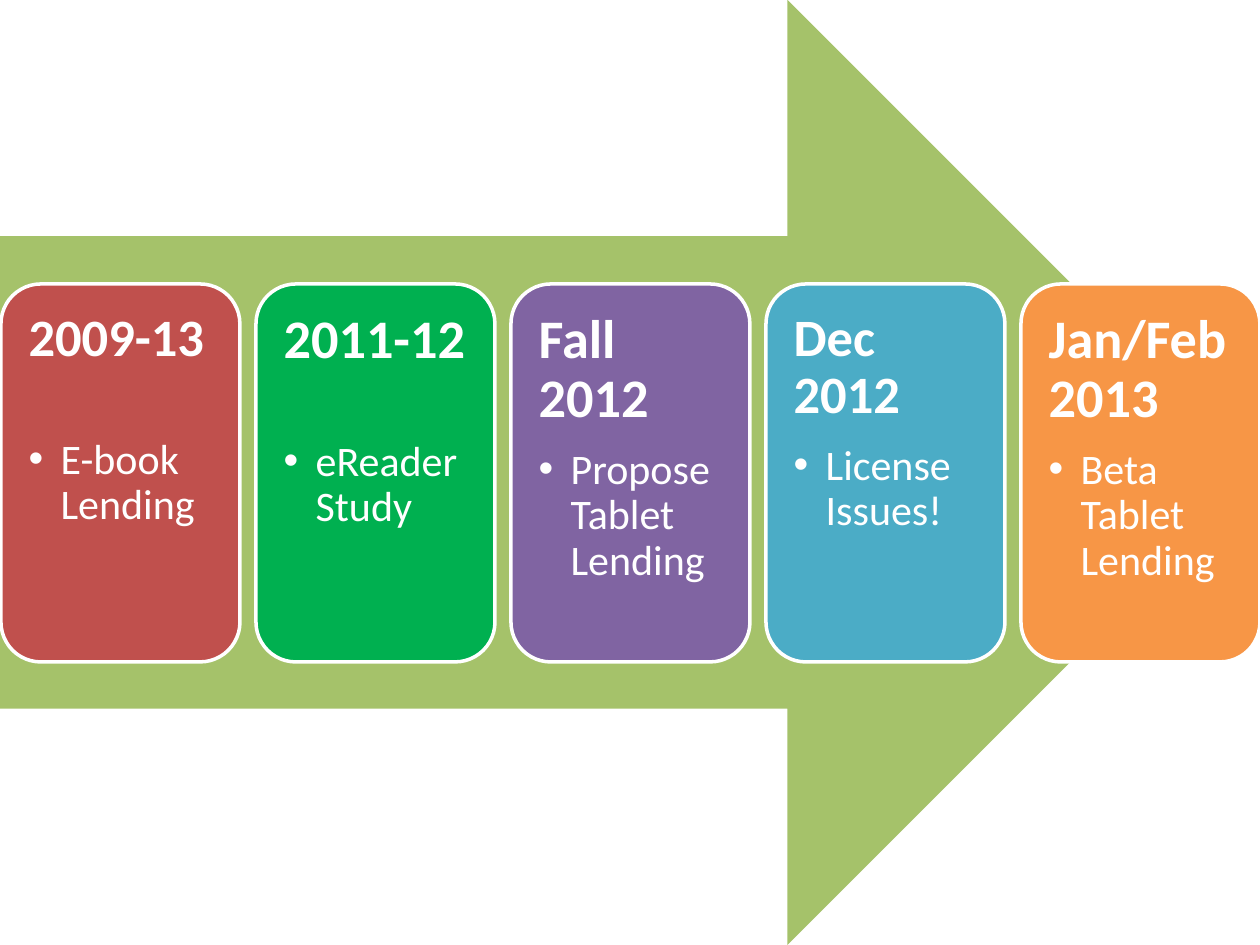
from pptx import Presentation
from pptx.dml.color import RGBColor
from pptx.enum.shapes import MSO_SHAPE
from pptx.enum.text import MSO_ANCHOR, PP_ALIGN
from pptx.oxml.ns import qn
from pptx.util import Pt
from lxml.etree import SubElement

SCALE = 914400 / 126
WIDE, HIGH = 1260, 945
STEP, GAP = 255, 16
TOP, TALL = 284, 378
INDENT = 32

WHITE = RGBColor(0xFF, 0xFF, 0xFF)
OLIVE = RGBColor(0xA5, 0xC2, 0x6A)
RED = RGBColor(0xC0, 0x50, 0x4D)
GREEN = RGBColor(0x00, 0xB0, 0x50)
PURPLE = RGBColor(0x80, 0x64, 0xA2)
BLUE = RGBColor(0x4B, 0xAC, 0xC6)
ORANGE = RGBColor(0xF7, 0x96, 0x46)

CARDS = [
    ("2009-13", "E-book Lending", RED, 30, 40),
    ("2011-12", "eReader Study", GREEN, 31, 40),
    ("Fall 2012", "Propose Tablet Lending", PURPLE, 31, 11),
    ("Dec 2012", "License Issues!", BLUE, 30, 11),
    ("Jan/Feb 2013", "Beta Tablet Lending", ORANGE, 31, 11),
]


def px(count):
    return round(count * SCALE)


def apply(item, form):
    for name, value in form.items():
        setattr(item, name, value)


def add_block(slide, kind, box, fill):
    block = slide.shapes.add_shape(kind, *map(px, box))
    block.shadow.inherit = False
    block.fill.solid()
    block.fill.fore_color.rgb = fill
    block.line.fill.background()
    return block


def add_bullet(para):
    props = para._p.get_or_add_pPr()
    props.set("marL", str(px(INDENT)))
    props.set("indent", str(-px(INDENT)))
    SubElement(props, qn("a:buFont"), typeface="Arial")
    SubElement(props, qn("a:buChar"), char="•")


def set_text(para, text, size, bold, after):
    para.text = text
    apply(para, {"alignment": PP_ALIGN.LEFT, "line_spacing": 0.9,
                 "space_after": Pt(after)})
    font = para.runs[0].font
    apply(font, {"name": "Calibri", "size": Pt(size), "bold": bold})
    font.color.rgb = WHITE


def add_card(slide, left, date, event, fill, size, after):
    box = (left, TOP, STEP - GAP, TALL)
    card = add_block(slide, MSO_SHAPE.ROUNDED_RECTANGLE, box, fill)
    card.line.color.rgb = WHITE
    card.line.width = Pt(2)
    frame = card.text_frame
    sides = ("left", "top", "right", "bottom")
    apply(frame, {f"margin_{side}": px(16) for side in sides})
    apply(frame, {"word_wrap": True, "vertical_anchor": MSO_ANCHOR.TOP})
    set_text(frame.paragraphs[0], date, size, True, after)
    item = frame.add_paragraph()
    item.level = 1
    add_bullet(item)
    set_text(item, event, 24, False, 4)


def main():
    deck = Presentation()
    apply(deck, {"slide_width": px(WIDE), "slide_height": px(HIGH)})
    slide = deck.slides.add_slide(deck.slide_layouts[6])
    add_block(slide, MSO_SHAPE.RIGHT_ARROW, (0, 0, WIDE, HIGH), OLIVE)
    for index, card in enumerate(CARDS):
        add_card(slide, 1 + index * STEP, *card)
    deck.save("out.pptx")


if __name__ == "__main__":
    main()
